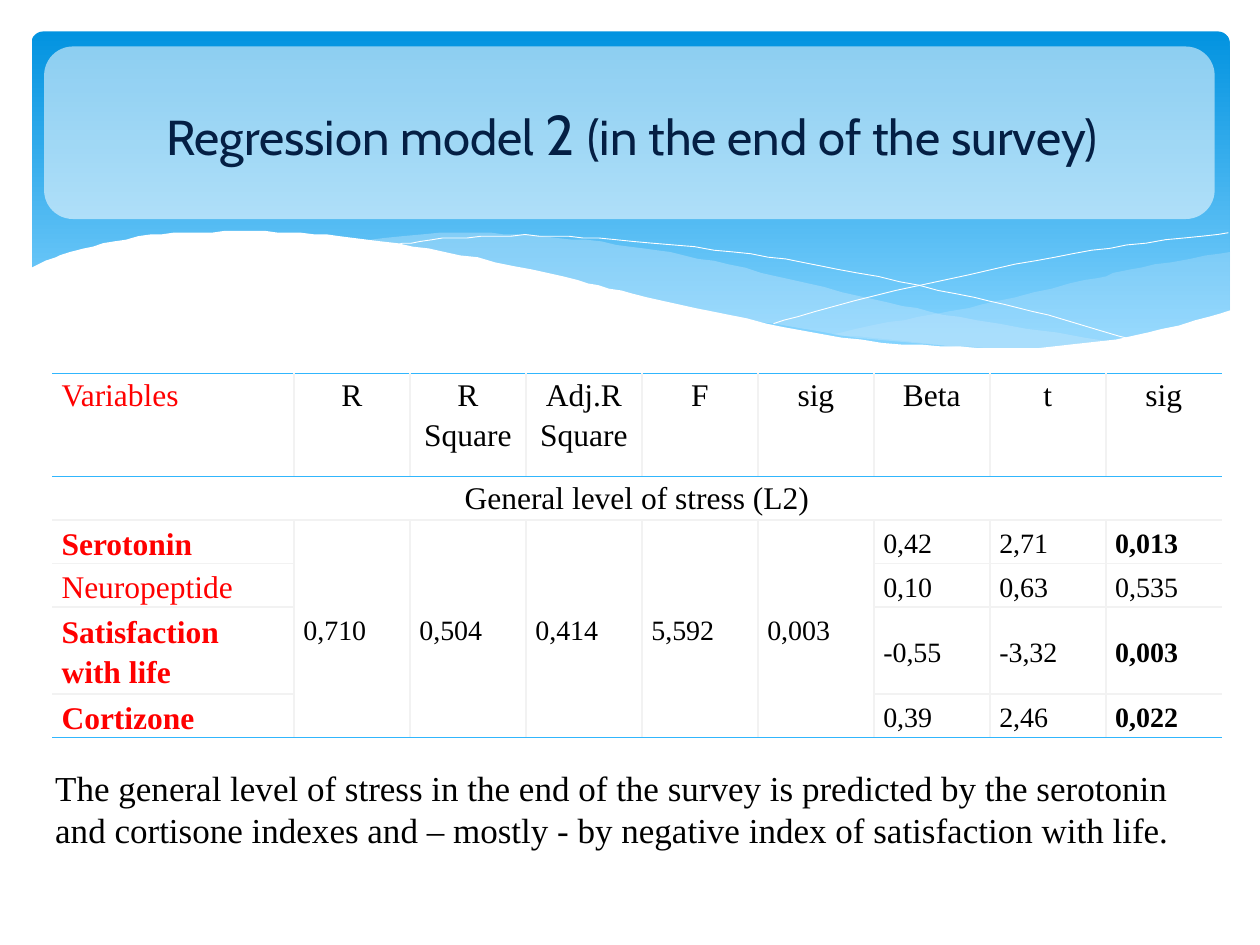
import pptx
import pptx.dml.color
import pptx.enum.shapes
import pptx.enum.text
import pptx.oxml
import pptx.oxml.ns
import pptx.util

Pt = pptx.util.Pt
SHAPES = pptx.enum.shapes.MSO_SHAPE
ALIGN = pptx.enum.text.PP_ALIGN
ANCHOR = pptx.enum.text.MSO_ANCHOR

THEME = {
    "title_font": "Cabin", "body_font": "Times New Roman",
    "title": "041F44", "text": "000000", "accent": "FF0000",
    "white": "FFFFFF", "ribbon": "C6E7FC",
    "sky_top": "0293E0", "sky_bottom": "83D3FE",
    "rule": "31B6FD", "grid": "F2F2F2",
    "title_size": 28, "numeral_size": 32, "body_size": 20,
    "label_size": 18, "value_size": 16,
}

TITLE = [("Regression model ", "title_size"), ("2 ", "numeral_size"),
         ("(in the end of the survey)", "title_size")]
CONCLUSION = ("The general level of stress in the end of the survey is predicted by the serotonin "
              "and cortisone indexes and – mostly - by negative index of satisfaction with life.")
HEADERS = ["Variables", "R", "R Square", "Adj.R Square", "F", "sig", "Beta", "t", "sig"]
OUTCOME = "General level of stress (L2)"
MODEL_FIT = ["0,710", "0,504", "0,414", "5,592", "0,003"]
PREDICTORS = [  # name, Beta, t, sig, significant
    ("Serotonin", "0,42", "2,71", "0,013", True),
    ("Neuropeptide", "0,10", "0,63", "0,535", False),
    ("Satisfaction with life", "-0,55", "-3,32", "0,003", True),
    ("Cortizone", "0,39", "2,46", "0,022", True),
]
COLUMN_WIDTHS = [138.2] + [66.3] * 8
ROW_HEIGHTS = [59] + [18.7] * 5
ROWS, COLUMNS = len(ROW_HEIGHTS), len(COLUMN_WIDTHS)

# Each ribbon is an upper and a lower edge: (edges, opacity in percent)
RIBBONS = [
    ([[(703, 144), (652, 153), (620, 160.5), (561, 174), (525, 181), (476, 191)],
      [(476, 191), (527, 196), (583, 200), (640, 198), (680, 189), (703, 178)]], 29),
    ([[(643, 196.5), (558, 183), (508, 173), (453, 160), (399, 147.5), (352, 139.5),
       (302, 134.5), (260, 133), (206, 137.5)],
      [(206, 137.5), (261, 146), (323, 160), (382, 173), (433, 183.5), (500, 194),
       (564, 199.5), (617, 199), (643, 196.5)]], 40),
]
THIN_WAVES = [
    [(222.5, 140.5), (253, 136.5), (300, 134.5), (352, 137), (419, 144), (479, 153.5),
     (547, 168), (599, 180.5), (653, 196)],
    [(441.5, 185), (500, 169), (580, 151), (644, 140), (702, 133)],
]
FRONT_WAVE = [(703.5, 177), (655.5, 190.5), (602, 198), (549, 198.5), (481, 193), (417, 180),
              (362, 167.8), (322, 158.5), (263, 145.5), (210, 137), (165.5, 133),
              (127.5, 132.5), (85.5, 134.5), (48, 142), (29, 147.5), (16.5, 153.5)]
FRONT_BASE = [(16.5, 237), (703.5, 237)]


def color(name):
    return pptx.dml.color.RGBColor.from_string(THEME[name])


def smooth(knots, steps=6):
    """Sample a Catmull-Rom curve through the knots."""
    padded = [knots[0], *knots, knots[-1]]
    points = []
    for a, b, c, d in zip(padded, padded[1:], padded[2:], padded[3:]):
        for step in range(steps):
            t = step / steps
            points.append(tuple(
                (2 * q + (r - p) * t + (2 * p - 5 * q + 4 * r - s) * t ** 2
                 + (3 * q - p - 3 * r + s) * t ** 3) / 2
                for p, q, r, s in zip(a, b, c, d)))
    return points + [knots[-1]]


def fill_solid(shape, name, opacity=100):
    shape.shadow.inherit = False
    shape.line.fill.background()
    shape.fill.solid()
    shape.fill.fore_color.rgb = color(name)
    if opacity < 100:
        value = shape.fill._xPr.find(".//" + pptx.oxml.ns.qn("a:srgbClr"))
        alpha = pptx.oxml.parse_xml(
            f'<a:alpha {pptx.oxml.ns.nsdecls("a")} val="{opacity * 1000}"/>')
        value.append(alpha)


def add_outline(page, points, close):
    builder = page.shapes.build_freeform(*points[0], scale=Pt(1))
    builder.add_line_segments(points[1:], close=close)
    return builder.convert_to_shape()


def add_rounded(page, left, top, width, height, radius):
    box = page.shapes.add_shape(SHAPES.ROUNDED_RECTANGLE, Pt(left), Pt(top), Pt(width), Pt(height))
    box.adjustments[0] = radius
    box.shadow.inherit = False
    box.line.fill.background()
    return box


def add_run(para, text, font, size, shade, bold=False):
    span = para.add_run()
    span.text = text
    span.font.name = THEME[font]
    span.font.size = Pt(THEME[size])
    span.font.color.rgb = color(shade)
    span.font.bold = bold


def add_text_box(page, left, top, width, height):
    box = page.shapes.add_textbox(Pt(left), Pt(top), Pt(width), Pt(height))
    box.text_frame.word_wrap = True
    return box.text_frame


def add_banner(page):
    sky = add_rounded(page, 18, 18, 684.7, 194.4, 0.034)
    sky.fill.gradient()
    sky.fill.gradient_angle = 270
    for stop, position, name in zip(sky.fill.gradient_stops, (0, 0.9), ("sky_top", "sky_bottom")):
        stop.position = position
        stop.color.rgb = color(name)
    for edges, opacity in RIBBONS:
        points = [point for edge in edges for point in smooth(edge)]
        fill_solid(add_outline(page, points, True), "ribbon", opacity)
    for knots in THIN_WAVES:
        wave = add_outline(page, smooth(knots), False)
        wave.shadow.inherit = False
        wave.fill.background()
        wave.line.color.rgb = color("white")
        wave.line.width = Pt(0.5)
    fill_solid(add_outline(page, smooth(FRONT_WAVE) + FRONT_BASE, True), "white")
    fill_solid(add_rounded(page, 25.2, 26.6, 668.9, 98.6, 0.167), "white", 54)


def horizontal_rule(edge, column):
    if edge in (0, 1, ROWS):
        return "rule"
    merged = 1 <= column <= len(MODEL_FIT) and edge > 2
    return None if merged else "grid"


def vertical_rule(edge, row):
    return None if edge in (0, COLUMNS) or row == 1 else "grid"


def set_borders(cell, row, column):
    last_row = row + (cell.span_height if cell.is_merge_origin else 1)
    borders = {"lnL": vertical_rule(column, row), "lnR": vertical_rule(column + 1, row),
               "lnT": horizontal_rule(row, column), "lnB": horizontal_rule(last_row, column)}
    properties = cell._tc.get_or_add_tcPr()
    for tag, name in borders.items():
        paint = (f'<a:solidFill><a:srgbClr val="{THEME[name]}"/></a:solidFill>'
                 if name else "<a:noFill/>")
        properties.append(pptx.oxml.parse_xml(
            f'<a:{tag} {pptx.oxml.ns.nsdecls("a")} w="{Pt(1)}">{paint}</a:{tag}>'))


def write_cell(cell, text, align, size="label_size", shade="text", bold=False):
    para = cell.text_frame.paragraphs[0]
    para.alignment = align
    para.line_spacing = 1.15
    para.space_after = Pt(10)
    add_run(para, text, "body_font", size, shade, bold)


def add_regression_table(page):
    frame = page.shapes.add_table(ROWS, COLUMNS, Pt(29.8), Pt(213.3),
                                  Pt(sum(COLUMN_WIDTHS)), Pt(sum(ROW_HEIGHTS)))
    table = frame.table
    table.first_row = table.horz_banding = False
    for column, width in zip(table.columns, COLUMN_WIDTHS):
        column.width = Pt(width)
    for row, height in zip(table.rows, ROW_HEIGHTS):
        row.height = Pt(height)
    table.cell(1, 0).merge(table.cell(1, COLUMNS - 1))
    for column in range(1, len(MODEL_FIT) + 1):
        table.cell(2, column).merge(table.cell(ROWS - 1, column))

    for row in range(ROWS):
        for column in range(COLUMNS):
            cell = table.cell(row, column)
            set_borders(cell, row, column)
            cell.fill.background()
            cell.margin_left = cell.margin_right = Pt(5.4)
            cell.margin_top = cell.margin_bottom = 0
            cell.vertical_anchor = ANCHOR.MIDDLE if row > 1 else ANCHOR.TOP

    write_cell(table.cell(0, 0), HEADERS[0], ALIGN.JUSTIFY, shade="accent")
    for column, text in enumerate(HEADERS[1:], 1):
        write_cell(table.cell(0, column), text, ALIGN.CENTER)
    write_cell(table.cell(1, 0), OUTCOME, ALIGN.CENTER)
    for column, text in enumerate(MODEL_FIT, 1):
        write_cell(table.cell(2, column), text, ALIGN.JUSTIFY, "value_size")
    for row, (name, *values, significant) in enumerate(PREDICTORS, 2):
        write_cell(table.cell(row, 0), name, ALIGN.JUSTIFY, shade="accent", bold=significant)
        for column, text in enumerate(values, COLUMNS - len(values)):
            write_cell(table.cell(row, column), text, ALIGN.JUSTIFY, "value_size",
                       bold=significant and column == COLUMNS - 1)


def main():
    deck = pptx.Presentation()
    deck.slide_width, deck.slide_height = Pt(720), Pt(540)
    page = deck.slides.add_slide(deck.slide_layouts[6])
    add_banner(page)

    title = add_text_box(page, 14.4, 26.6, 693.4, 98.6)
    title.vertical_anchor = ANCHOR.MIDDLE
    title.paragraphs[0].alignment = ALIGN.CENTER
    for text, size in TITLE:
        add_run(title.paragraphs[0], text, "title_font", size, "title")

    conclusion = add_text_box(page, 24.5, 434.2, 679, 55.4)
    add_run(conclusion.paragraphs[0], CONCLUSION, "body_font", "body_size", "text")
    add_regression_table(page)
    deck.save("out.pptx")


if __name__ == "__main__":
    main()
